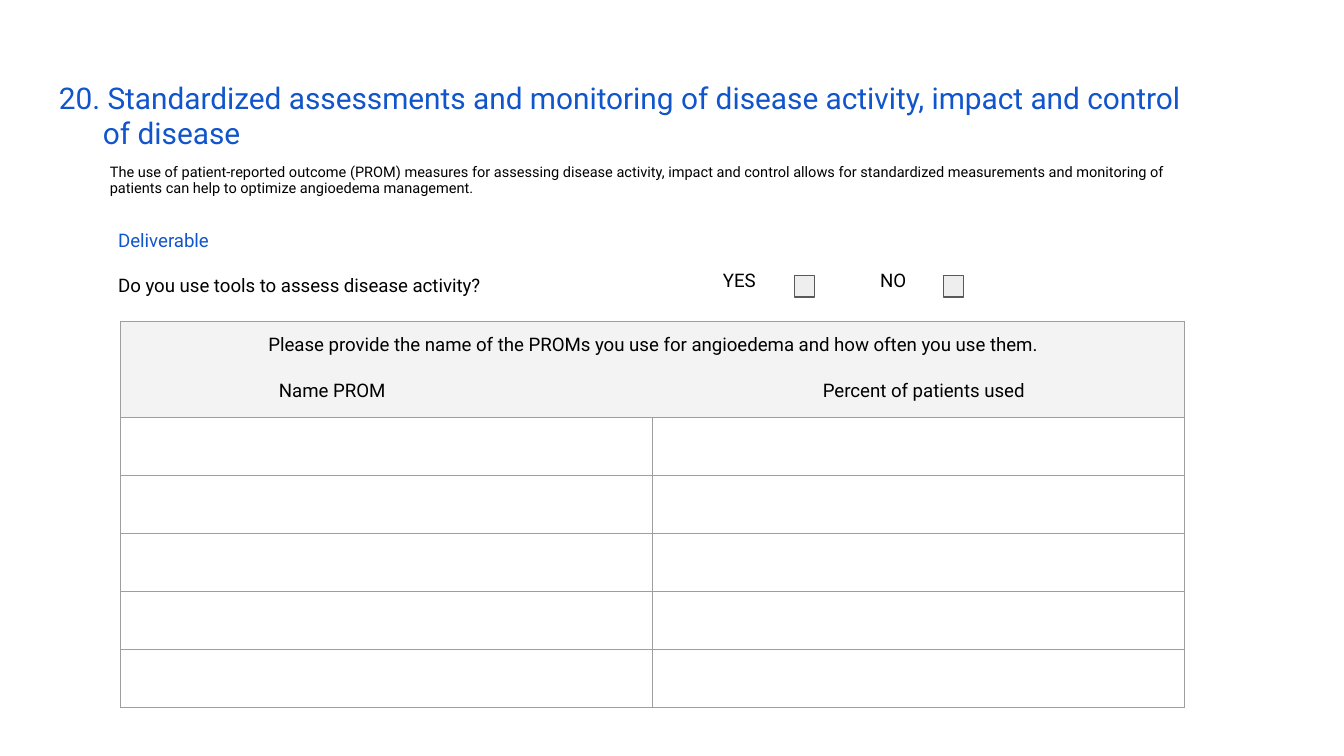
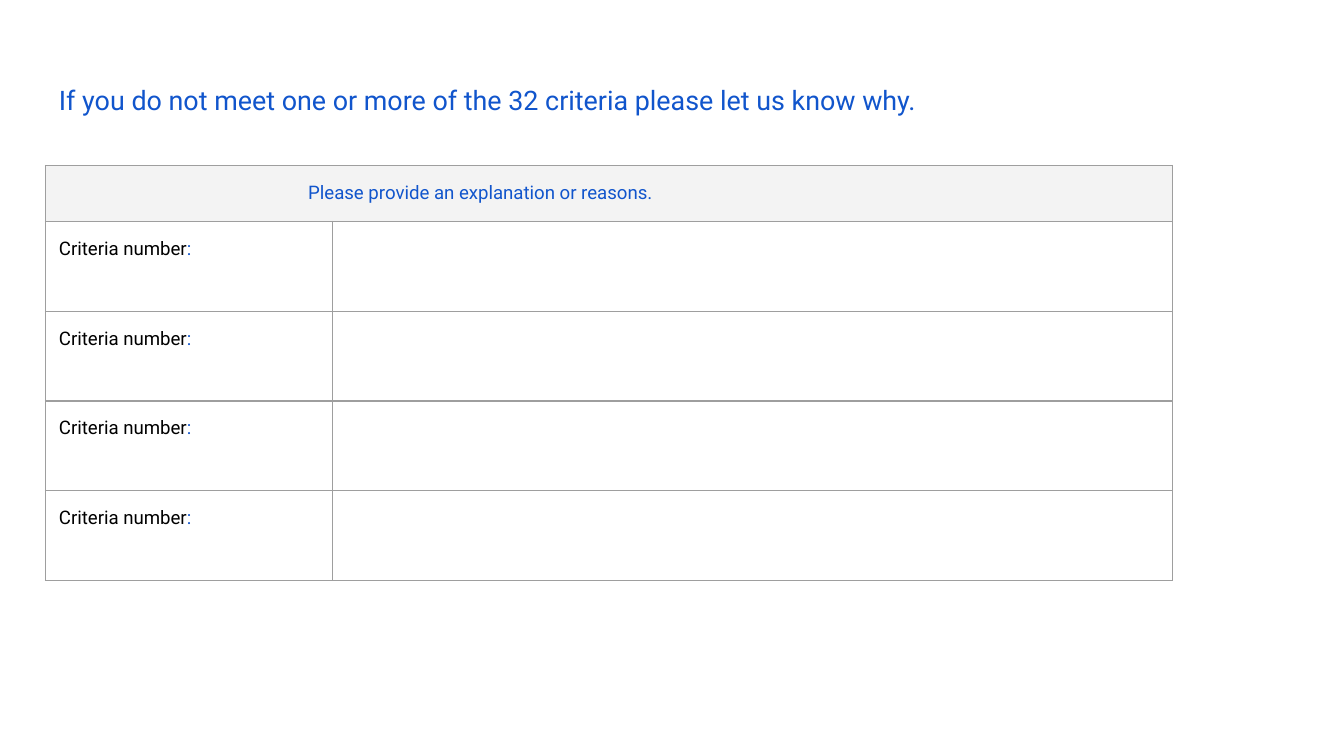
"""Build two questionnaire slides on angioedema care criteria."""
from dataclasses import dataclass
from typing import Optional

import pptx
import pptx.dml.color
import pptx.enum.shapes
import pptx.enum.text
import pptx.oxml
import pptx.oxml.ns
import pptx.util
from pptx.util import Pt

FONT = "Roboto"
BLUE, BLACK, HEADER_GREY = "1155CC", "000000", "F3F3F3"
BOX_FILL, BOX_LINE, GRID = "EEEEEE", "595959", "9E9E9E"
INSET = 7.2
BORDER = 0.75
TITLE_LEFT, TITLE_TOP, TITLE_HEIGHT = 24.5, 35.3, 45.4
CENTER = pptx.enum.text.PP_ALIGN.CENTER


@dataclass(frozen=True)
class Run:
    """A stretch of text in one style."""
    text: str
    size: float = 10
    color: str = BLACK


@dataclass(frozen=True)
class Para:
    """A paragraph with its runs and spacing."""
    runs: tuple[Run, ...]
    align: Optional[pptx.enum.text.PP_ALIGN] = None
    spacing: float = 1
    before: float = 0
    after: float = 0
    indent: float = 0
    tabs: tuple[float, ...] = ()


@dataclass(frozen=True)
class Grid:
    """A table whose first row is one merged header."""
    left: float
    top: float
    cols: tuple[float, ...]
    header_height: float
    row_height: float
    header: tuple[Para, ...]
    labels: tuple[Optional[Para], ...]


@dataclass(frozen=True)
class Choice:
    """An answer label and the tick box beside it."""
    label: str
    left: float
    box_left: float


def rgb(color: str) -> pptx.dml.color.RGBColor:
    """Turn a hex string into a colour."""
    return pptx.dml.color.RGBColor.from_string(color)


def fill_text(tf, paras: tuple[Para, ...]) -> None:
    """Write paragraphs run by run into a text frame."""
    for i, para in enumerate(paras):
        p = tf.add_paragraph() if i else tf.paragraphs[0]
        p.alignment = para.align
        p.line_spacing = para.spacing
        p.space_before, p.space_after = Pt(para.before), Pt(para.after)
        pPr = p._p.get_or_add_pPr()
        pPr.set("marL", str(Pt(para.indent)))
        if para.tabs:
            stops = "".join(f'<a:tab pos="{Pt(t)}" algn="l"/>' for t in para.tabs)
            pPr.append(pptx.oxml.parse_xml(
                f'<a:tabLst {pptx.oxml.ns.nsdecls("a")}>{stops}</a:tabLst>'))
        for run in para.runs:
            r = p.add_run()
            r.text = run.text
            r.font.name, r.font.size = FONT, Pt(run.size)
            r.font.color.rgb = rgb(run.color)


def set_insets(holder) -> None:
    """Give a text frame or a cell equal insets."""
    holder.margin_left = holder.margin_right = Pt(INSET)
    holder.margin_top = holder.margin_bottom = Pt(INSET)


def add_text(s, left: float, top: float, width: float, height: float, *paras: Para) -> None:
    """Add a wrapping text box."""
    tf = s.shapes.add_textbox(Pt(left), Pt(top), Pt(width), Pt(height)).text_frame
    tf.word_wrap = True
    set_insets(tf)
    fill_text(tf, paras)


def add_title(s, width: float, *paras: Para) -> None:
    """Add the slide title at its shared place."""
    add_text(s, TITLE_LEFT, TITLE_TOP, width, TITLE_HEIGHT, *paras)


def add_choice(s, choice: Choice) -> None:
    """Add an answer label with its tick box."""
    add_text(s, choice.left, 135.4, 36, 26.6,
             Para((Run(choice.label),), spacing=1.15, before=6, after=12))
    sp = s.shapes.add_shape(pptx.enum.shapes.MSO_SHAPE.RECTANGLE,
                            Pt(choice.box_left), Pt(147.6), Pt(10.8), Pt(11.5))
    sp.shadow.inherit = False
    sp.fill.solid()
    sp.fill.fore_color.rgb = rgb(BOX_FILL)
    sp.line.color.rgb = rgb(BOX_LINE)
    sp.line.width = Pt(BORDER)


def add_borders(cell) -> None:
    """Draw the four borders of a cell."""
    tcPr = cell._tc.get_or_add_tcPr()
    for side in "LRTB":
        tcPr.append(pptx.oxml.parse_xml(
            f'<a:ln{side} {pptx.oxml.ns.nsdecls("a")} w="{Pt(BORDER)}"><a:solidFill>'
            f'<a:srgbClr val="{GRID}"/></a:solidFill></a:ln{side}>'))


def add_grid(s, grid: Grid) -> None:
    """Add a table with a merged header and label cells."""
    heights = (grid.header_height,) + (grid.row_height,) * len(grid.labels)
    table = s.shapes.add_table(len(heights), len(grid.cols), Pt(grid.left), Pt(grid.top),
                               Pt(sum(grid.cols)), Pt(sum(heights))).table
    table.first_row = table.horz_banding = False
    for col, width in zip(table.columns, grid.cols):
        col.width = Pt(width)
    for row, height in zip(table.rows, heights):
        row.height = Pt(height)
    for cell in table.iter_cells():
        add_borders(cell)
        cell.fill.background()
    head = table.cell(0, 0)
    head.merge(table.cell(0, len(grid.cols) - 1))
    head.fill.solid()
    head.fill.fore_color.rgb = rgb(HEADER_GREY)
    set_insets(head)
    fill_text(head.text_frame, grid.header)
    for i, label in enumerate(grid.labels, 1):
        if label:
            cell = table.cell(i, 0)
            set_insets(cell)
            fill_text(cell.text_frame, (label,))


def build_prom_slide(s) -> None:
    """Build the slide on patient-reported outcome measures."""
    add_title(
        s, 631.4,
        Para((Run("20. Standardized assessments and monitoring of disease activity, "
                  "impact and control", 16, BLUE),)),
        Para((Run("of disease", 16, BLUE),), indent=23.6))
    add_text(
        s, 51.8, 80.6, 595.4, 45.4,
        Para((Run("The use of patient-reported outcome (PROM) measures for assessing disease "
                  "activity, impact and control allows for standardized measurements and "
                  "monitoring of patients can help to optimize angioedema management.", 7.8),),
             spacing=0.95, after=12))
    for choice in (Choice("YES", 380.2, 425.5), Choice("NO", 464.4, 505.4)):
        add_choice(s, choice)
    add_text(s, 56.2, 115.2, 236.2, 51.1,
             Para((Run("Deliverable", color=BLUE),)),
             Para((Run("Do you use tools to assess disease activity?"),), before=12.4))
    add_grid(s, Grid(
        64.6, 172.1, (285.1, 285.1), 51.4, 31.1,
        (Para((Run("Please provide the name of the PROMs you use for angioedema "
                   "and how often you use them."),), CENTER),
         Para((Run("\tName PROM\tPercent of patients used"),), before=12.9,
              tabs=(77.6, 369))),
        (None,) * 5))


def build_reasons_slide(s) -> None:
    """Build the slide asking why criteria are not met."""
    add_title(s, 671, Para(
        (Run("If you do not meet one or more of the 32 criteria please let us know why.",
             14.4, BLUE),), spacing=1.15, before=12, after=12))
    label = Para((Run("Criteria number"), Run(":", color=BLUE)), spacing=1.15, after=12)
    add_grid(s, Grid(
        24.4, 88.7, (153.8, 450), 30, 48.05,
        (Para((Run("Please provide an explanation or reasons.", color=BLUE),),
              spacing=1.15, before=12, after=12, indent=133.5),),
        (label,) * 4))


def main() -> None:
    """Build and save the presentation."""
    prs = pptx.Presentation()
    prs.slide_width, prs.slide_height = Pt(720), Pt(405)
    for build in (build_prom_slide, build_reasons_slide):
        build(prs.slides.add_slide(prs.slide_layouts[6]))
    prs.save("out.pptx")


if __name__ == "__main__":
    main()
